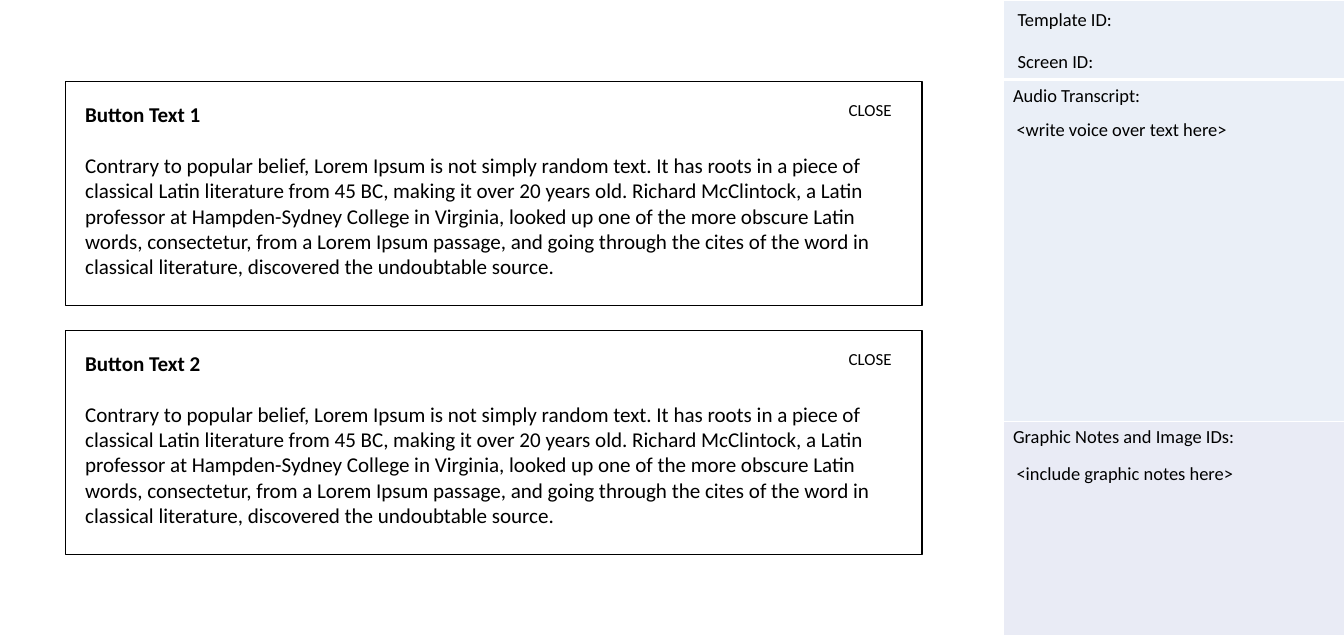
"""Builds a storyboard slide with two button panels and a notes sidebar."""
from dataclasses import dataclass

from lxml import etree
from pptx import Presentation
from pptx.dml.color import RGBColor
from pptx.enum.shapes import MSO_SHAPE
from pptx.enum.text import MSO_ANCHOR, PP_ALIGN
from pptx.oxml.ns import qn
from pptx.slide import Slide
from pptx.table import _Cell
from pptx.text.text import _Paragraph
from pptx.util import Pt

RECTANGLE = MSO_SHAPE.RECTANGLE
TOP = MSO_ANCHOR.TOP
LEFT = PP_ALIGN.LEFT
FONT = "Calibri"
COLORS = {"text": "000000", "panel": "FFFFFF", "grid": "FFFFFF",
          "sidebar": "EAEFF7", "graphics": "E9EBF5"}
BODY = (
    "Contrary to popular belief, Lorem Ipsum is not simply random text. "
    "It has roots in a piece of classical Latin literature from 45 BC, making it "
    "over 20 years old. Richard McClintock, a Latin professor at Hampden-Sydney "
    "College in Virginia, looked up one of the more obscure Latin words, "
    "consectetur, from a Lorem Ipsum passage, and going through the cites of the "
    "word in classical literature, discovered the undoubtable source."
)


@dataclass(frozen=True)
class Label:
    """A line of text in its own box."""
    text: str
    left: float
    top: float
    width: float
    height: float = 24.5
    size: float = 14


@dataclass(frozen=True)
class Section:
    """A row of the sidebar."""
    heading: str
    height: float
    fill: str
    rule_below: float = 1


@dataclass(frozen=True)
class Panel:
    """A framed text with a close label."""
    heading: str
    top: float
    left: float = 49.7
    width: float = 650.2
    height: float = 169.9


SECTIONS = [
    Section("", 60.5, "sidebar", 3),
    Section("Audio Transcript:", 259.2, "sidebar"),
    Section("Graphic Notes and Image IDs:", 162.7, "graphics"),
]
LABELS = [
    Label("Screen ID:", 765.4, 34.6, 275),
    Label("Template ID:", 765.4, 2.9, 275),
    Label("<write voice over text here>", 764.6, 85.7, 256.3),
    Label("<include graphic notes here>", 764.6, 347, 256.3),
]
PANELS = [Panel("Button Text 1", 61.9), Panel("Button Text 2", 250.6)]


def rgb(name: str) -> RGBColor:
    """Return a named colour."""
    return RGBColor.from_string(COLORS[name])


def format_text(p: _Paragraph, size: float, bold: bool = False) -> None:
    """Format all runs of a paragraph."""
    p.alignment = LEFT
    for r in p.runs:
        r.font.name = FONT
        r.font.size = Pt(size)
        r.font.bold = bold
        r.font.color.rgb = rgb("text")


def add_label(s: Slide, label: Label) -> None:
    """Add a text box."""
    sp = s.shapes.add_textbox(Pt(label.left), Pt(label.top),
                              Pt(label.width), Pt(label.height))
    tf = sp.text_frame
    tf.word_wrap = True
    tf.text = label.text
    format_text(tf.paragraphs[0], label.size)


def add_panel(s: Slide, panel: Panel) -> None:
    """Add a framed panel and its close label."""
    sp = s.shapes.add_shape(RECTANGLE, Pt(panel.left), Pt(panel.top),
                            Pt(panel.width), Pt(panel.height))
    sp.shadow.inherit = False
    sp.fill.solid()
    sp.fill.fore_color.rgb = rgb("panel")
    sp.line.color.rgb = rgb("text")
    sp.line.width = Pt(1)
    tf = sp.text_frame
    tf.word_wrap = True
    tf.vertical_anchor = TOP
    tf.margin_left = tf.margin_right = tf.margin_top = tf.margin_bottom = Pt(15)
    tf.text = panel.heading
    format_text(tf.paragraphs[0], 16, True)
    p = tf.add_paragraph()
    p.text = BODY
    p.space_before = Pt(19.5)
    format_text(p, 16)
    add_label(s, Label("CLOSE", panel.left + 587.5, panel.top + 10.1, 62.6, 23, 12.8))


def set_borders(cell: _Cell, top: float, bottom: float) -> None:
    """Draw the four borders of a cell."""
    tc_pr = cell._tc.get_or_add_tcPr()
    sides = {"a:lnL": 1, "a:lnR": 1, "a:lnT": top, "a:lnB": bottom}
    for i, (tag, width) in enumerate(sides.items()):
        ln = etree.Element(qn(tag), w=str(Pt(width)))
        fill = etree.SubElement(ln, qn("a:solidFill"))
        etree.SubElement(fill, qn("a:srgbClr"), val=COLORS["grid"])
        tc_pr.insert(i, ln)


def add_sidebar(s: Slide) -> None:
    """Add the notes table at the right."""
    height = sum(section.height for section in SECTIONS)
    frame = s.shapes.add_table(len(SECTIONS), 1, Pt(761.8), Pt(0),
                               Pt(258.5), Pt(height))
    table = frame.table
    table.horz_banding = False
    rule_above = 1.0
    for i, section in enumerate(SECTIONS):
        table.rows[i].height = Pt(section.height)
        cell = table.cell(i, 0)
        cell.fill.solid()
        cell.fill.fore_color.rgb = rgb(section.fill)
        set_borders(cell, rule_above, section.rule_below)
        rule_above = section.rule_below
        if section.heading:
            cell.text_frame.text = section.heading
            format_text(cell.text_frame.paragraphs[0], 14)


def main() -> None:
    """Build and save the slide."""
    prs = Presentation()
    prs.slide_width, prs.slide_height = Pt(1020.24), Pt(481.68)
    s = prs.slides.add_slide(prs.slide_layouts[6])
    add_sidebar(s)
    for label in LABELS:
        add_label(s, label)
    for panel in PANELS:
        add_panel(s, panel)
    prs.save("out.pptx")


if __name__ == "__main__":
    main()
